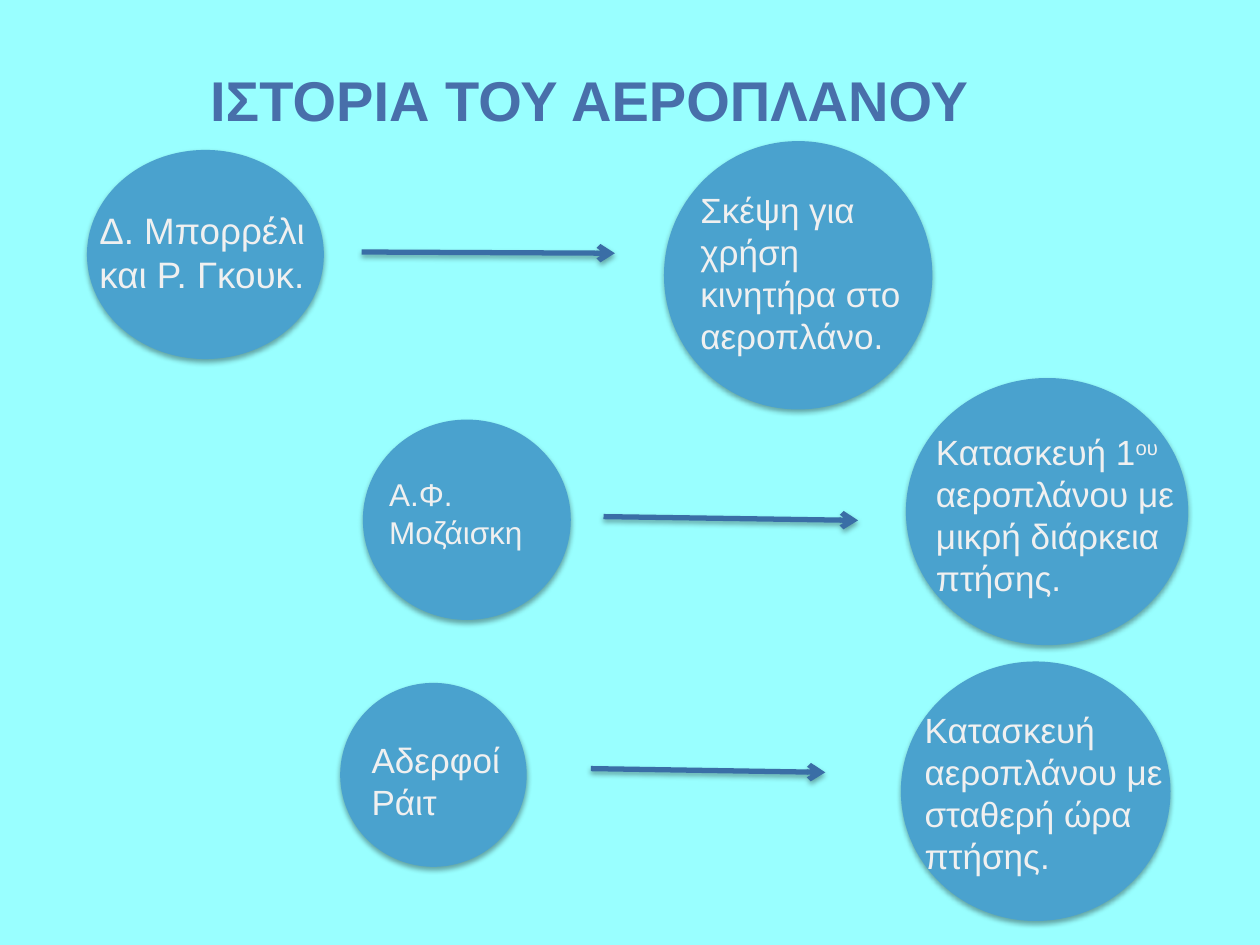
import dataclasses
import pptx
import pptx.dml.color
import pptx.enum.shapes
import pptx.enum.text
import pptx.oxml
import pptx.oxml.ns
import pptx.util

# Grid of 100 columns by 75 rows, each cell 0.1 inch
CELL = pptx.util.Inches(0.1)
COLS, ROWS = 100, 75
SKY, DISC, LINE, PALE, HEAD = "99FFFF", "4AA2CE", "3A6EA6", "F0F0F0", "486FAA"
FONT = "Arial"


@dataclasses.dataclass
class Box:
    left: float
    top: float
    width: float
    height: float

    def place(self) -> list[int]:
        return [grid(v) for v in (self.left, self.top, self.width, self.height)]


@dataclasses.dataclass
class Bubble:
    disc: Box
    label: Box
    text: str  # "^" starts a raised ending
    size: int = 20


@dataclasses.dataclass
class Arrow:
    left: float
    top: float
    right: float
    drop: float


BUBBLES = [
    Bubble(Box(6.9, 11.9, 18.8, 16.6), Box(6.9, 16, 21.8, 8.1),
           "Δ. Μπορρέλι και Ρ. Γκουκ.", 21),
    Bubble(Box(52.7, 11.2, 21.3, 21.3), Box(54.6, 14.5, 20.6, 14.5),
           "Σκέψη για χρήση κινητήρα στο αεροπλάνο."),
    Bubble(Box(28.8, 33.3, 16.5, 15.9), Box(29.9, 37.2, 14.6, 7.1),
           "Α.Φ. Μοζάισκη", 18),
    Bubble(Box(71.9, 30, 22.4, 21.2), Box(73.3, 33.7, 21.2, 14.5),
           "Κατασκευή 1^ου\nαεροπλάνου με μικρή διάρκεια πτήσης."),
    Bubble(Box(27, 54.2, 14.8, 14.6), Box(28.5, 58.1, 13.1, 7.7),
           "Αδερφοί Ράιτ"),
    Bubble(Box(71.5, 52.5, 21.4, 20.6), Box(72.4, 55.7, 24.6, 14.5),
           "Κατασκευή αεροπλάνου με σταθερή ώρα πτήσης."),
]
ARROWS = [
    Arrow(28.7, 20, 48.8, 0.1),
    Arrow(47.9, 41, 68.1, 0.3),
    Arrow(46.9, 61, 65.5, 0.3),
]


def grid(cells: float) -> int:
    return round(cells * CELL)


def tint(code: str) -> pptx.dml.color.RGBColor:
    return pptx.dml.color.RGBColor.from_string(code)


def shade(shape) -> None:
    """Add a soft shadow that falls straight down."""
    shape._element.spPr.append(pptx.oxml.parse_xml(
        f'<a:effectLst {pptx.oxml.ns.nsdecls("a")}>'
        '<a:outerShdw blurRad="39370" dist="22860" dir="5400000" rotWithShape="0">'
        '<a:srgbClr val="000000"><a:alpha val="35000"/></a:srgbClr>'
        '</a:outerShdw></a:effectLst>'))


def write(slide, box: Box, text: str, size: int, color: str, bold: bool = False):
    """Add a wrapped text box and return its frame."""
    frame = slide.shapes.add_textbox(*box.place()).text_frame
    frame.word_wrap = True
    frame.text = text.replace("^", "")
    for line, para in zip(text.split("\n"), frame.paragraphs):
        base, mark, raised = line.partition("^")
        para.text = base
        if mark:
            run = para.add_run()
            run.text = raised
            run._r.get_or_add_rPr().set("baseline", "30000")
        for run in para.runs:
            run.font.name = FONT
            run.font.size = pptx.util.Pt(size)
            run.font.bold = bold
            run.font.color.rgb = tint(color)
    return frame


def draw_bubble(slide, item: Bubble) -> None:
    disc = slide.shapes.add_shape(
        pptx.enum.shapes.MSO_SHAPE.OVAL, *item.disc.place())
    disc.fill.solid()
    disc.fill.fore_color.rgb = tint(DISC)
    disc.line.fill.background()
    shade(disc)
    write(slide, item.label, item.text, item.size, PALE)


def draw_arrow(slide, item: Arrow) -> None:
    line = slide.shapes.add_connector(
        pptx.enum.shapes.MSO_CONNECTOR.STRAIGHT,
        grid(item.left), grid(item.top),
        grid(item.right), grid(item.top + item.drop))
    line.line.color.rgb = tint(LINE)
    line.line.width = pptx.util.Pt(3)
    line.line._get_or_add_ln().append(pptx.oxml.parse_xml(
        f'<a:tailEnd {pptx.oxml.ns.nsdecls("a")} type="arrow"/>'))
    shade(line)


def main() -> None:
    deck = pptx.Presentation()
    deck.slide_width, deck.slide_height = grid(COLS), grid(ROWS)
    slide = deck.slides.add_slide(deck.slide_layouts[6])
    slide.background.fill.solid()
    slide.background.fill.fore_color.rgb = tint(SKY)

    # Title
    title = write(slide, Box(15.7, 2.3, 69.1, 8.7),
                  "ΙΣΤΟΡΙΑ ΤΟΥ ΑΕΡΟΠΛΑΝΟΥ", 32, HEAD, True)
    title.vertical_anchor = pptx.enum.text.MSO_ANCHOR.BOTTOM

    # People, what they did, and the arrows between
    for bubble in BUBBLES:
        draw_bubble(slide, bubble)
    for arrow in ARROWS:
        draw_arrow(slide, arrow)

    deck.save("out.pptx")


if __name__ == "__main__":
    main()
